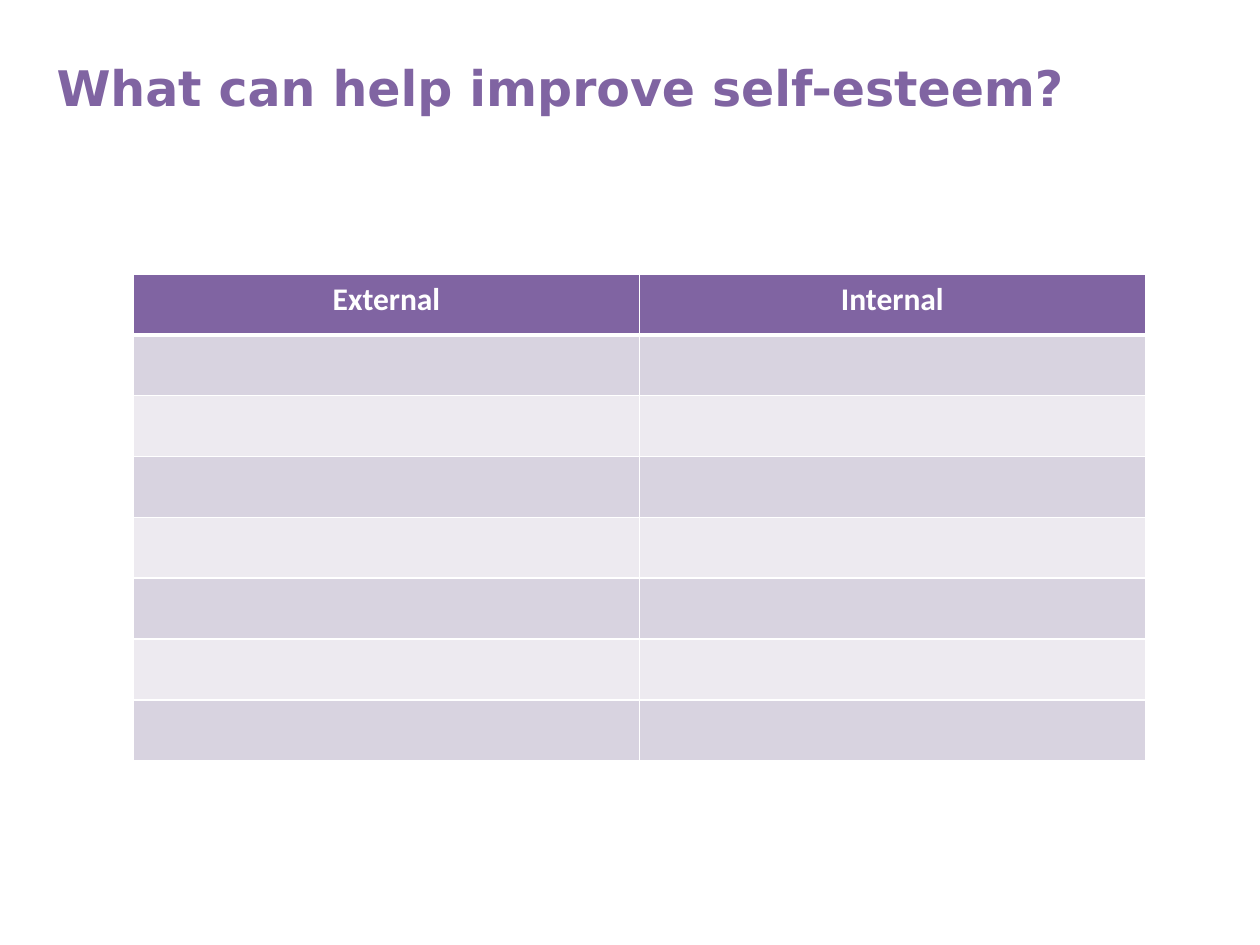
import dataclasses
import typing

import lxml.etree
import pptx
import pptx.dml.color
import pptx.enum.text
import pptx.oxml.ns
import pptx.util


@dataclasses.dataclass(frozen=True)
class Theme:
    main: str = "8064A2"
    dark: str = "D8D3E0"
    light: str = "EDEAF0"
    white: str = "FFFFFF"
    title: float = 28
    head: float = 18
    thin: float = 1
    thick: float = 3


class Box(typing.NamedTuple):
    left: float
    top: float
    width: float
    height: float


THEME = Theme()
WIDE, HIGH = pptx.util.Inches(10), pptx.util.Inches(7.5)
TITLE = Box(0.035, 0.008, 0.921, 0.167)
GRID = Box(0.106, 0.29, 0.803, 0.515)
HEADS = ("External", "Internal")
ROWS = 8


def place(box: Box) -> list[int]:
    return [round(share * size) for share, size in zip(box, (WIDE, HIGH, WIDE, HIGH))]


def rgb(color: str) -> pptx.dml.color.RGBColor:
    return pptx.dml.color.RGBColor.from_string(color)


def write(para, text: str, size: float, face: str, color: str) -> None:
    run = para.add_run()
    run.text = text
    style = {"size": pptx.util.Pt(size), "name": face, "bold": True}
    for name, value in style.items():
        setattr(run.font, name, value)
    run.font.color.rgb = rgb(color)


def border(cell, side: str, width: float) -> None:
    tag = pptx.oxml.ns.qn
    props = cell._tc.get_or_add_tcPr()
    line = lxml.etree.SubElement(props, tag("a:ln" + side), w=str(pptx.util.Pt(width)))
    fill = lxml.etree.SubElement(line, tag("a:solidFill"))
    lxml.etree.SubElement(fill, tag("a:srgbClr"), val=THEME.white)


def paint(cell, row: int) -> None:
    for side in "LRTB":
        edge = (row, side) in ((0, "B"), (1, "T"))
        border(cell, side, THEME.thick if edge else THEME.thin)
    cell.fill.solid()
    band = THEME.dark if row % 2 else THEME.light
    cell.fill.fore_color.rgb = rgb(band if row else THEME.main)


def add_title(slide, text: str) -> None:
    frame = slide.shapes.add_textbox(*place(TITLE)).text_frame
    style = {"word_wrap": True, "vertical_anchor": pptx.enum.text.MSO_ANCHOR.MIDDLE}
    for name, value in style.items():
        setattr(frame, name, value)
    write(frame.paragraphs[0], text, THEME.title, "DejaVu Sans", THEME.main)


def add_grid(slide) -> None:
    table = slide.shapes.add_table(ROWS, len(HEADS), *place(GRID)).table
    for row in range(ROWS):
        for col in range(len(HEADS)):
            paint(table.cell(row, col), row)
    for col, text in enumerate(HEADS):
        para = table.cell(0, col).text_frame.paragraphs[0]
        para.alignment = pptx.enum.text.PP_ALIGN.CENTER
        write(para, text, THEME.head, "Calibri", THEME.white)


def main() -> None:
    deck = pptx.Presentation()
    deck.slide_width, deck.slide_height = WIDE, HIGH
    slide = deck.slides.add_slide(deck.slide_layouts[6])
    add_title(slide, "What can help improve self-esteem?")
    add_grid(slide)
    deck.save("out.pptx")


if __name__ == "__main__":
    main()
